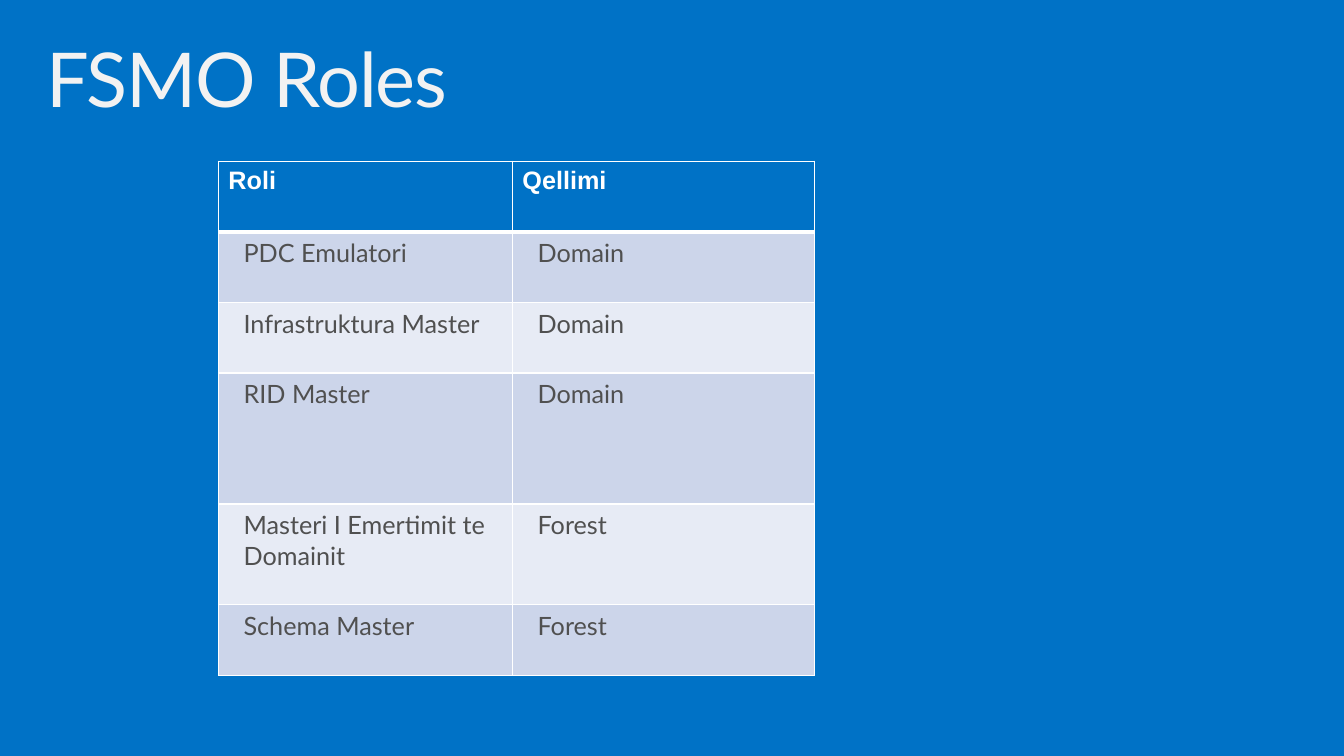
from lxml import etree
from pptx import Presentation
from pptx import util as u
from pptx.dml.color import RGBColor
from pptx.enum import text
from pptx.oxml import ns

BLUE = RGBColor(0x00, 0x72, 0xC6)
WHITE = RGBColor(0xFF, 0xFF, 0xFF)
OFF_WHITE = RGBColor(0xF2, 0xF2, 0xF2)
GREY = RGBColor(0x50, 0x50, 0x50)
BAND_DARK = RGBColor(0xCC, 0xD5, 0xEA)
BAND_LIGHT = RGBColor(0xE7, 0xEB, 0xF5)

# Grid of 160 columns by 90 rows
GRID_COLS, GRID_ROWS = 160, 90

ROLES = [
    ("Roli", "Qellimi"),
    ("PDC Emulatori", "Domain"),
    ("Infrastruktura Master", "Domain"),
    ("RID Master", "Domain"),
    ("Masteri I Emertimit te Domainit", "Forest"),
    ("Schema Master", "Forest"),
]
COL_WIDTHS = [35, 36]
ROW_HEIGHTS = [8.4, 8.4, 8.4, 15.6, 12, 8.4]


class Deck:
    """Style and current slide."""

    font, head_font = "Lato", "Arial"

    def __init__(self):
        self.prs = Presentation()
        self.prs.slide_width, self.prs.slide_height = u.Inches(13.33), u.Inches(7.5)
        self.s = self.prs.slides.add_slide(self.prs.slide_layouts[5])
        self.s.background.fill.solid()
        self.s.background.fill.fore_color.rgb = BLUE

    def x(self, cols):
        return round(self.prs.slide_width * cols / GRID_COLS)

    def y(self, rows):
        return round(self.prs.slide_height * rows / GRID_ROWS)

    def run(self, p, words, font, size, color, bold=False):
        r = p.add_run()
        r.text = words
        r.font.name, r.font.size, r.font.bold = font, u.Pt(size), bold
        r.font.color.rgb = color
        return r

    def title(self, words, left, top, width, height):
        sp = self.s.shapes.title
        sp.left, sp.top = self.x(left), self.y(top)
        sp.width, sp.height = self.x(width), self.y(height)
        tf = sp.text_frame
        tf.word_wrap = True
        tf.auto_size = text.MSO_AUTO_SIZE.NONE
        tf.vertical_anchor = text.MSO_ANCHOR.TOP
        tf.margin_left = tf.margin_right = u.Inches(0.16)
        tf.margin_top = tf.margin_bottom = u.Inches(0.1)
        p = tf.paragraphs[0]
        p.alignment, p.line_spacing = text.PP_ALIGN.LEFT, 0.9
        r = self.run(p, words, self.font, 54, OFF_WHITE)
        r.font._element.set("spc", "-80")

    def border(self, cell, side, points):
        tc_pr = cell._tc.get_or_add_tcPr()
        ln = etree.SubElement(tc_pr, ns.qn("a:ln" + side), w=str(u.Pt(points)))
        fill = etree.SubElement(ln, ns.qn("a:solidFill"))
        etree.SubElement(fill, ns.qn("a:srgbClr"), val=str(WHITE))

    def cell(self, cell, words, row):
        head = row == 0
        # Borders, with a heavy rule under the header
        heavy = {(0, "B"), (1, "T")}
        for side in "LRTB":
            self.border(cell, side, 3 if (row, side) in heavy else 1)
        cell.fill.solid()
        cell.fill.fore_color.rgb = BLUE if head else (BAND_LIGHT, BAND_DARK)[row % 2]
        cell.margin_left = cell.margin_right = u.Inches(0.1 if head else 0.25)
        cell.margin_top = cell.margin_bottom = u.Inches(0.05 if head else 0.06)
        cell.vertical_anchor = text.MSO_ANCHOR.TOP
        self.run(cell.text_frame.paragraphs[0], words,
                 self.head_font if head else self.font, 18,
                 WHITE if head else GREY, head)

    def table(self, rows, left, top, widths, heights):
        frame = self.s.shapes.add_table(
            len(rows), len(widths), self.x(left), self.y(top),
            self.x(sum(widths)), self.y(sum(heights)))
        table = frame.table
        for column, width in zip(table.columns, widths):
            column.width = self.x(width)
        for i, (values, height) in enumerate(zip(rows, heights)):
            table.rows[i].height = self.y(height)
            for j, words in enumerate(values):
                self.cell(table.cell(i, j), words, i)


def main():
    deck = Deck()
    # Title
    deck.title("FSMO Roles", 3.6, 3.84, 153, 11.76)
    # Roles and their scope
    deck.table(ROLES, 26, 19.2, COL_WIDTHS, ROW_HEIGHTS)
    deck.prs.save("out.pptx")


if __name__ == "__main__":
    main()
